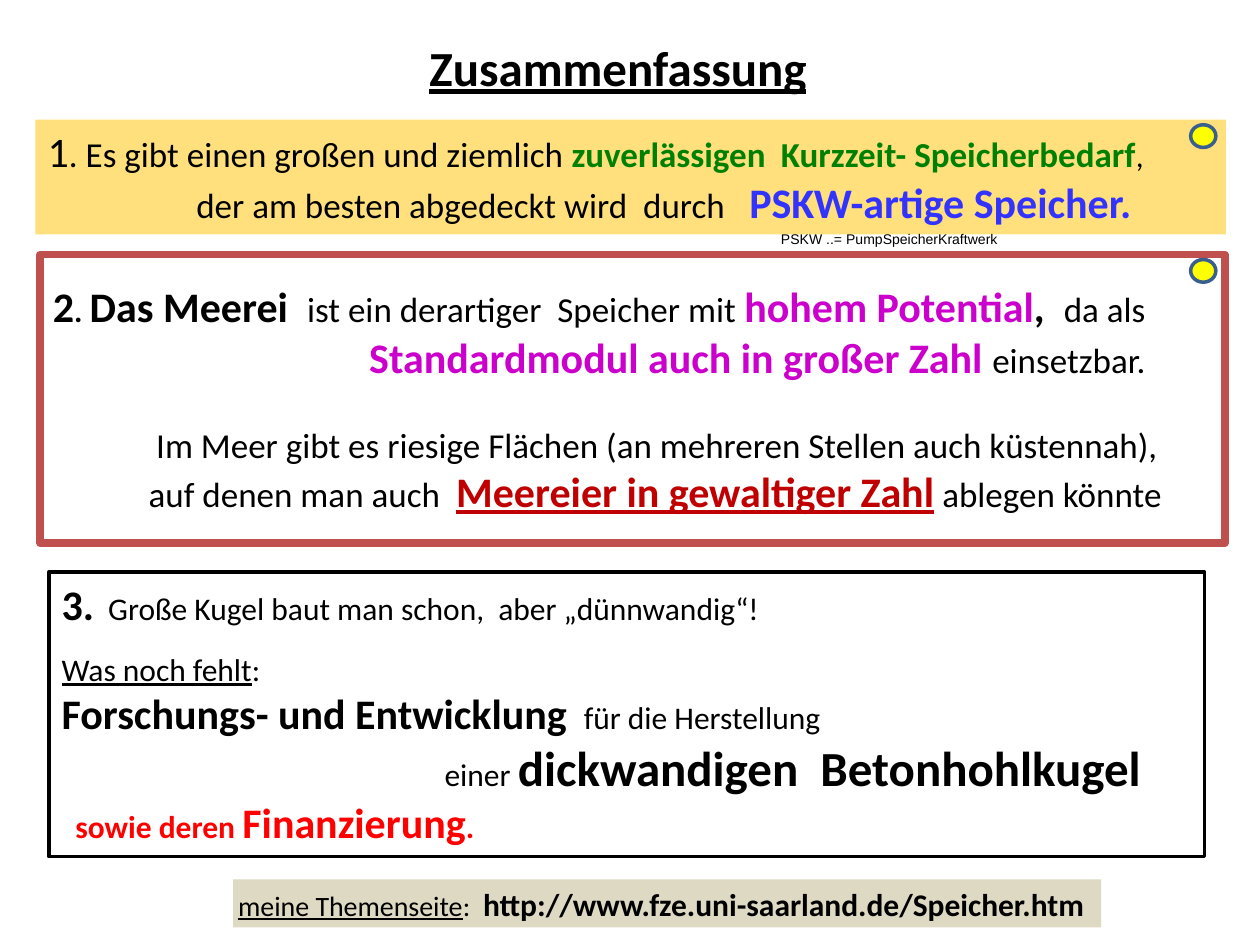
from pptx import Presentation
from pptx.dml.color import RGBColor
from pptx.enum.shapes import MSO_SHAPE as Shape
from pptx.enum.text import MSO_ANCHOR as Anchor
from pptx.util import Inches, Pt

BLACK, GREEN, BLUE = "000000", "008000", "3333FF"
MAGENTA, DARK_RED, RED = "CC00CC", "C00000", "FF0000"

deck = Presentation()
deck.slide_width, deck.slide_height = Inches(10), Inches(7.5)
page = deck.slides.add_slide(deck.slide_layouts[6])
column, row = deck.slide_width / 100, deck.slide_height / 75


def add_panel(kind, area, fill=None, line=None, weight=2):
    left, top, width, height = area
    panel = page.shapes.add_shape(
        kind, int(left * column), int(top * row), int(width * column), int(height * row))
    panel.shadow.inherit = False
    for paint, value in ((panel.fill, fill), (panel.line.fill, line)):
        if value:
            paint.solid()
            paint.fore_color.rgb = RGBColor.from_string(value)
        else:
            paint.background()
    if line:
        panel.line.width = Pt(weight)
    return panel


def write(box, lines, insets=(1, 0.5, 1, 0.5), font="Calibri", wrap=True):
    frame = box.text_frame
    frame.word_wrap = wrap
    frame.vertical_anchor = Anchor.TOP
    frame.margin_left, frame.margin_top, frame.margin_right, frame.margin_bottom = (
        int(inset * unit) for inset, unit in zip(insets, (column, row, column, row)))
    for number, (indent, before, spans) in enumerate(lines):
        para = frame.paragraphs[0] if number == 0 else frame.add_paragraph()
        properties = para._p.get_or_add_pPr()
        properties.set("marL", str(int(indent * column)))
        properties.set("indent", "0")
        properties.set("algn", "l")
        para.space_before = Pt(before)
        for text, size, color, style in spans:
            span = para.add_run()
            span.text = text
            span.font.name = font
            span.font.size = Pt(size)
            span.font.bold = "b" in style
            span.font.underline = "u" in style
            span.font.color.rgb = RGBColor.from_string(color)


title = page.shapes.add_textbox(
    int(33.1 * column), int(2.5 * row), int(33.9 * column), int(5.7 * row))
write(title, [(0, 0, [("Zusammenfassung", 28, BLACK, "bu")])])

demand = add_panel(Shape.RECTANGLE, (2.8, 9.5, 94.5, 9.1), "FFE07D")
write(demand, [
    (0, 0, [("1", 24, BLACK, ""),
            (". Es gibt einen großen und ziemlich ", 20, BLACK, ""),
            ("zuverlässigen ", 20, GREEN, "b"),
            (" ", 18, BLACK, ""),
            ("Kurzzeit- Speicherbedarf", 20, GREEN, "b"),
            (",", 18, BLACK, "")]),
    (11.8, 0, [("der am besten abgedeckt wird  durch   ", 20, BLACK, ""),
               ("PSKW-artige Speicher.", 24, BLUE, "b")]),
])

potential = add_panel(Shape.RECTANGLE, (3.2, 20.2, 94, 22.9), line="C0504D", weight=4.5)
write(potential, [
    (0.6, 0, [("2", 24, BLACK, "b"),
              (". ", 18, BLACK, "b"),
              ("Das Meerei  ", 24, BLACK, "b"),
              ("ist ein derartiger  Speicher mit ", 20, BLACK, ""),
              ("hohem Potential", 24, MAGENTA, "b"),
              (",  ", 24, BLACK, "b"),
              ("da als", 20, BLACK, "")]),
    (25.7, 0, [("Standardmodul auch in großer Zahl ", 24, MAGENTA, "b"),
               ("einsetzbar.", 20, BLACK, "")]),
    (8.8, 24, [("Im Meer gibt es riesige Flächen (an mehreren Stellen auch küstennah),",
                20, BLACK, "")]),
    (8.2, 0, [("auf denen man auch  ", 20, BLACK, ""),
              ("Meereier in gewaltiger Zahl", 24, DARK_RED, "bu"),
              (" ", 20, BLACK, "b"),
              ("ablegen könnte", 20, BLACK, "")]),
], insets=(0.4, 2.1, 0.4, 0.1))

missing = add_panel(Shape.RECTANGLE, (3.9, 45.4, 91.7, 22.6), "FFFFFF", BLACK)
write(missing, [
    (0, 0, [("3.", 24, BLACK, "b"),
            ("  Große Kugel baut man schon,  aber „dünnwandig“!", 18, BLACK, "")]),
    (0, 12, [("Was noch fehlt", 18, BLACK, "u"), (":", 18, BLACK, "")]),
    (0, 0, [("Forschungs- und Entwicklung ", 24, BLACK, "b"),
            (" für die Herstellung", 18, BLACK, "")]),
    (30.4, 0, [("einer ", 18, BLACK, ""),
               ("dickwandigen  Betonhohlkugel", 28, BLACK, "b")]),
    (1.1, 0, [("sowie deren ", 18, RED, "b"),
              ("Finanzierung", 24, RED, "b"),
              (".", 18, RED, "b")]),
])

abbreviation = page.shapes.add_textbox(
    int(61 * column), int(17.8 * row), int(19.3 * column), int(2.4 * row))
write(abbreviation, [(0, 0, [("PSKW ..= PumpSpeicherKraftwerk", 8, BLACK, "")])],
      font="Arial", wrap=False)

for top in (9.9, 20.6):
    add_panel(Shape.OVAL, (94.5, top, 2, 1.8), "FFFF00", "3A5F8C")

website = add_panel(Shape.RECTANGLE, (18.5, 69.8, 68.9, 3.8), "DDD9C3")
write(website, [
    (0, 0, [("meine Themenseite", 16, BLACK, "u"),
            (":  ", 16, BLACK, ""),
            ("http://www.fze.uni-saarland.de/Speicher.htm", 18, BLACK, "b")]),
], insets=(0.4, 0.4, 0.4, 0.4))

deck.save("out.pptx")
